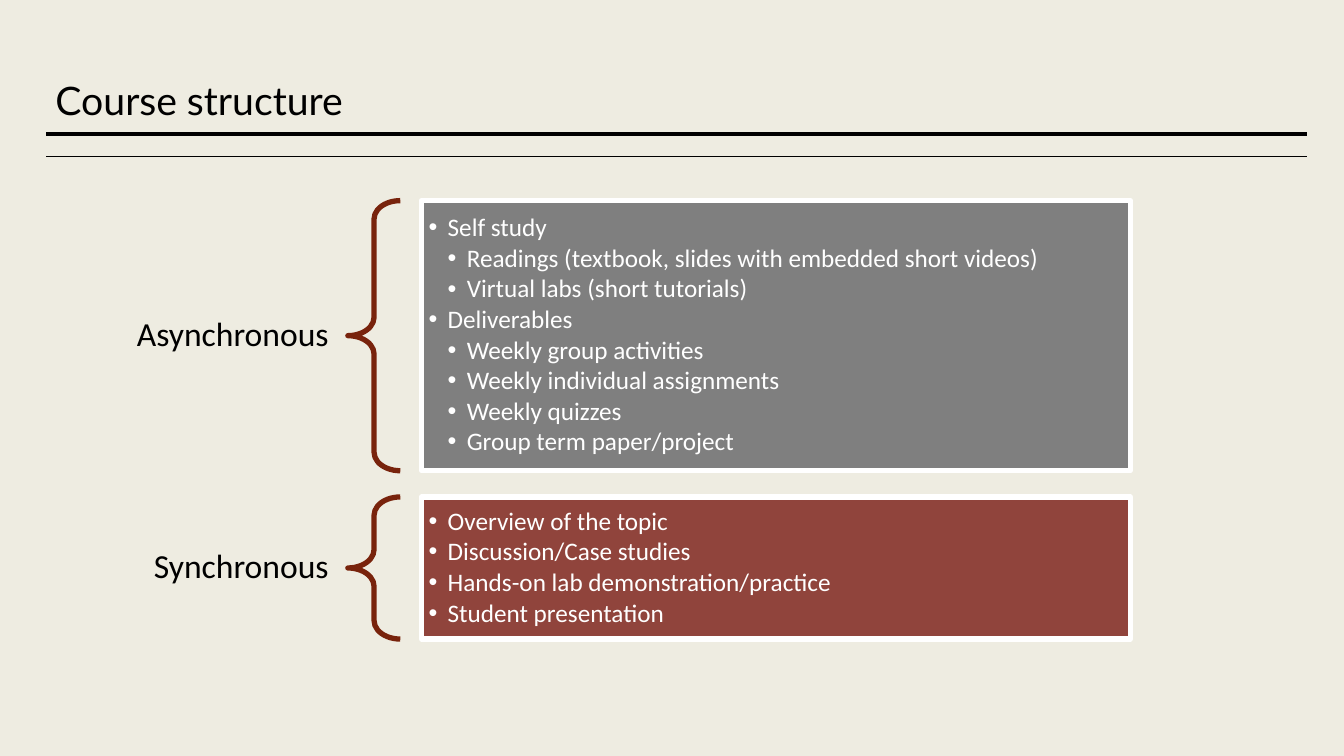
from lxml.etree import SubElement
from pptx import Presentation
from pptx.dml.color import RGBColor
from pptx.enum.shapes import MSO_CONNECTOR as Connector, MSO_SHAPE as Shape
from pptx.enum.text import MSO_ANCHOR as Anchor, MSO_AUTO_SIZE as AutoSize, PP_ALIGN as Align
from pptx.oxml.ns import qn
from pptx.util import Inches, Pt

# Content: label, panel colour, panel height, (level, item)
TITLE = "Course structure"
SECTIONS = [
    ("Asynchronous", "7F7F7F", 2.68, [
        (1, "Self study"),
        (2, "Readings (textbook, slides with embedded short videos)"),
        (2, "Virtual labs (short tutorials)"),
        (1, "Deliverables"),
        (2, "Weekly group activities"),
        (2, "Weekly individual assignments"),
        (2, "Weekly quizzes"),
        (2, "Group term paper/project"),
    ]),
    ("Synchronous", "90443C", 1.41, [
        (1, "Overview of the topic"),
        (1, "Discussion/Case studies"),
        (1, "Hands-on lab demonstration/practice"),
        (1, "Student presentation"),
    ]),
]

# Grid: (left, width) of each column, then rows
LABEL_COLUMN, BRACE_COLUMN, PANEL_COLUMN = (0.87, 2.58), (3.45, 0.52), (4.18, 7.03)
FIRST_ROW, ROW_GAP, LABEL_HEIGHT = 1.99, 0.26, 1.41
RULE_LEFT, RULE_RIGHT = 0.46, 12.96
RULES = [(1.33, 3), (1.55, 1)]
INDENT, BORDER = 0.19, 3.78

TITLE_FONT = {"name": "Lato", "size": Pt(28)}
LABEL_FONT = {"name": "Calibri", "size": Pt(24)}
ITEM_FONT = {"name": "Calibri", "size": Pt(18)}


def colour(target, value):
    """Colour a fill, or a font or line through its fill."""
    fill = getattr(target, "fill", target)
    fill.solid()
    fill.fore_color.rgb = RGBColor.from_string(value)


def place(shape, left, top, width, height):
    shape.left, shape.top = Inches(left), Inches(top)
    shape.width, shape.height = Inches(width), Inches(height)


def set_frame(frame, anchor, side, edge):
    formats = {"word_wrap": True, "auto_size": AutoSize.NONE, "vertical_anchor": anchor,
               "margin_left": Inches(side), "margin_right": Inches(side),
               "margin_top": Inches(edge), "margin_bottom": Inches(edge)}
    for name, value in formats.items():
        setattr(frame, name, value)


def write(paragraph, text, font, ink, align=Align.LEFT, after=0):
    formats = {"alignment": align, "line_spacing": 0.9,
               "space_before": Pt(0), "space_after": Pt(after)}
    for name, value in formats.items():
        setattr(paragraph, name, value)
    run = paragraph.add_run()
    run.text = text
    for name, value in font.items():
        setattr(run.font, name, value)
    colour(run.font, ink)


def add_bullet(paragraph, level):
    paragraph.level = level - 1
    properties = paragraph._p.get_or_add_pPr()
    properties.set("marL", str(Inches(INDENT * level)))
    properties.set("indent", str(-Inches(INDENT)))
    SubElement(properties, qn("a:buFont"), typeface="Arial")
    SubElement(properties, qn("a:buChar"), char="•")


def border(shape, value, width):
    colour(shape.line, value)
    shape.line.width = Pt(width)


presentation = Presentation()
presentation.slide_width, presentation.slide_height = Inches(13.33), Inches(7.5)
slide = presentation.slides.add_slide(presentation.slide_layouts[3])
colour(slide.background, "EEECE1")
heading, *panels = slide.placeholders

# Title with its two rules
place(heading, 0.55, 0.08, 9.37, 1.2)
set_frame(heading.text_frame, Anchor.BOTTOM, 0, 0.05)
write(heading.text_frame.paragraphs[0], TITLE, TITLE_FONT, "000000")
for rule_top, weight in RULES:
    rule = slide.shapes.add_connector(Connector.STRAIGHT, Inches(RULE_RIGHT), Inches(rule_top),
                                      Inches(RULE_LEFT), Inches(rule_top))
    border(rule, "000000", weight)
    SubElement(rule._element.spPr, qn("a:effectLst"))

# One row per section: label, brace, panel
top = FIRST_ROW
for panel, (label, panel_colour, height, items) in zip(panels, SECTIONS):
    label_top = top + (height - LABEL_HEIGHT) / 2
    label_box = slide.shapes.add_textbox(0, 0, 0, 0)
    place(label_box, LABEL_COLUMN[0], label_top, LABEL_COLUMN[1], LABEL_HEIGHT)
    set_frame(label_box.text_frame, Anchor.MIDDLE, 0.19, 0.07)
    write(label_box.text_frame.paragraphs[0], label, LABEL_FONT, "000000", Align.RIGHT)

    brace = slide.shapes.add_shape(Shape.LEFT_BRACE, 0, 0, 0, 0)
    place(brace, BRACE_COLUMN[0], top, BRACE_COLUMN[1], height)
    brace.adjustments[0], brace.adjustments[1] = 0.35, 0.5
    brace.shadow.inherit = False
    brace.fill.background()
    border(brace, "78230C", BORDER)

    place(panel, PANEL_COLUMN[0], top, PANEL_COLUMN[1], height)
    colour(panel, panel_colour)
    border(panel, "FFFFFF", BORDER)
    frame = panel.text_frame
    set_frame(frame, Anchor.MIDDLE, 0.07, 0.07)
    for index, (level, item) in enumerate(items):
        paragraph = frame.add_paragraph() if index else frame.paragraphs[0]
        add_bullet(paragraph, level)
        write(paragraph, item, ITEM_FONT, "FFFFFF", after=2.4)
    top += height + ROW_GAP

presentation.save("out.pptx")
